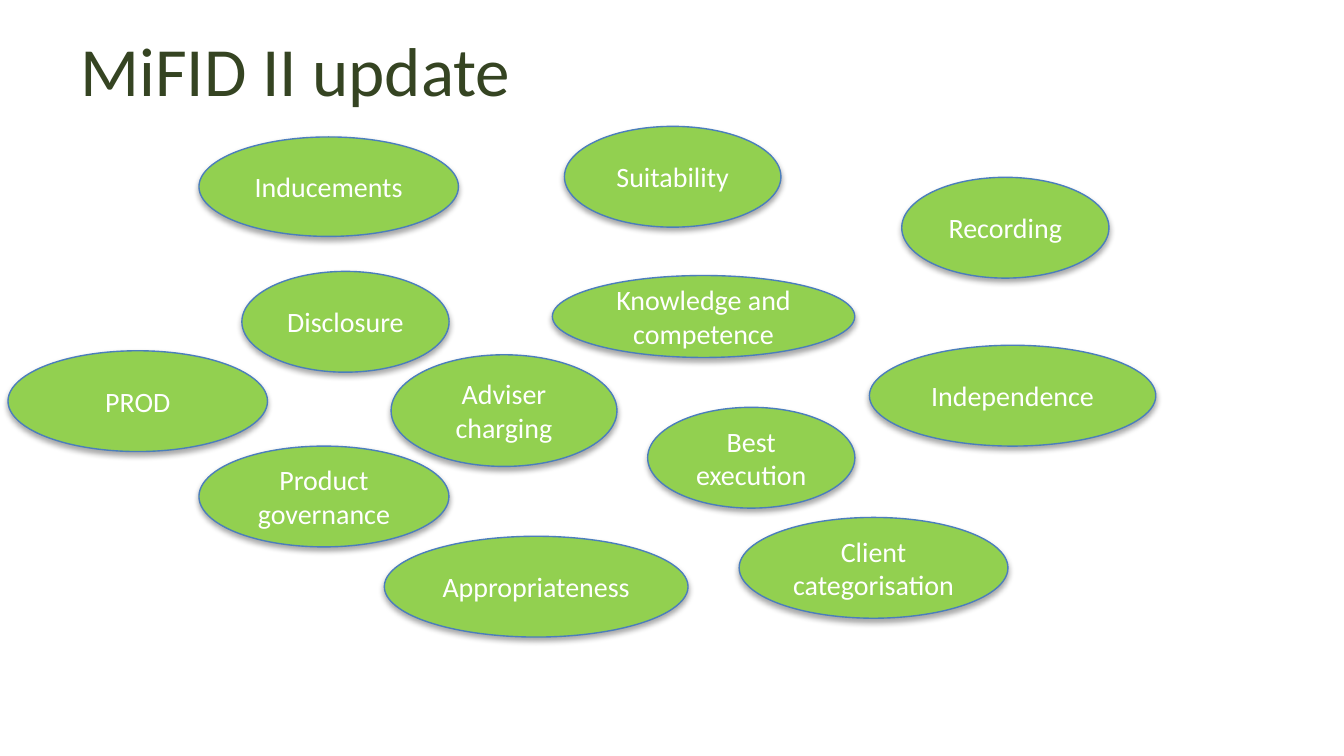
from lxml import etree
from pptx import Presentation
from pptx.dml.color import RGBColor
from pptx.enum.shapes import MSO_SHAPE as Preset
from pptx.enum.text import MSO_ANCHOR as Anchor, PP_ALIGN as Align
from pptx.oxml.ns import qn
from pptx.util import Pt

GREEN, DARK_GREEN, BLUE, WHITE = "92D050", "354422", "4B7EBC", "FFFFFF"

# Topic: left, top, width, height in points, relative to the topic area
TOPICS = {
    "Inducements": (102.3, 5.7, 139, 53.3),
    "Suitability": (298.1, 0, 116, 54),
    "Disclosure": (125.3, 77.7, 111, 54),
    "Knowledge and competence": (291.6, 79.9, 162, 43.9),
    "Best execution": (342.7, 150.5, 111, 54),
    "Independence": (461.5, 117.3, 153.4, 54),
    "Client categorisation": (391.7, 209.5, 144, 54),
    "Appropriateness": (201.6, 219.6, 162.7, 54),
    "Product governance": (102.3, 171.3, 133.9, 54),
    "Recording": (478.8, 27.3, 111, 54),
    "Adviser charging": (205.2, 122.4, 121, 59.8),
    "PROD": (0, 120.2, 139, 54),
}


def color(value):
    return RGBColor.from_string(value)


def write_text(shape, text, size=15, fill=WHITE, align=Align.CENTER):
    frame = shape.text_frame
    frame.word_wrap = True
    frame.vertical_anchor = Anchor.MIDDLE
    paragraph = frame.paragraphs[0]
    paragraph.text = text
    paragraph.alignment = align
    font = paragraph.font
    font.name, font.size = "Calibri", Pt(size)
    font.color.rgb = color(fill)


def add_shadow(shape, blur=3.1, distance=1.8, opacity=35):
    shape.shadow.inherit = False
    effects = shape.element.spPr.find(qn("a:effectLst"))
    shadow = etree.SubElement(
        effects, qn("a:outerShdw"), blurRad=str(Pt(blur)), dist=str(Pt(distance)),
        dir=str(90 * 60000), rotWithShape="0")
    black = etree.SubElement(shadow, qn("a:srgbClr"), val="000000")
    etree.SubElement(black, qn("a:alpha"), val=str(opacity * 1000))


def add_title(slide, left, top, width, height):
    title = slide.shapes.add_textbox(Pt(left), Pt(top), Pt(width), Pt(height))
    write_text(title, "MiFID II update", size=37, fill=DARK_GREEN, align=Align.LEFT)


def add_topics(slide, left, top):
    for topic, (x, y, width, height) in TOPICS.items():
        ellipse = slide.shapes.add_shape(
            Preset.OVAL, Pt(left + x), Pt(top + y), Pt(width), Pt(height))
        ellipse.fill.solid()
        ellipse.fill.fore_color.rgb = color(GREEN)
        ellipse.line.color.rgb = color(BLUE)
        ellipse.line.width = Pt(0.75)
        add_shadow(ellipse)
        write_text(ellipse, topic)


def main():
    presentation = Presentation()
    presentation.slide_width, presentation.slide_height = Pt(720), Pt(405)
    slide = presentation.slides.add_slide(presentation.slide_layouts[6])
    # Heading
    add_title(slide, 36, 2.9, 648, 67.7)
    # Scattered topic ellipses
    add_topics(slide, 4.3, 67.7)
    presentation.save("out.pptx")


if __name__ == "__main__":
    main()
